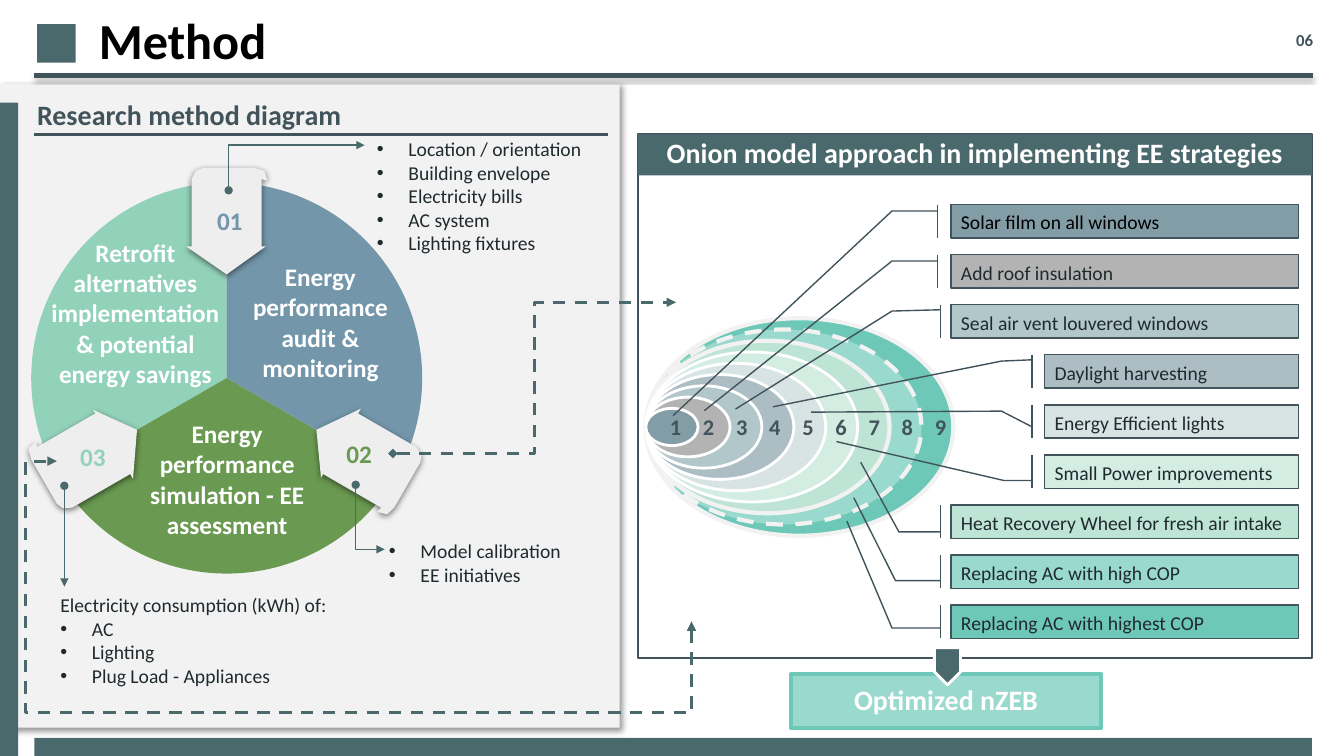
from math import cos, radians, sin

from lxml.etree import SubElement
from pptx import Presentation
from pptx.dml.color import RGBColor
from pptx.enum.dml import MSO_LINE as Dash
from pptx.enum.shapes import MSO_CONNECTOR as Connector, MSO_SHAPE as Shape
from pptx.enum.text import MSO_ANCHOR as Anchor, MSO_AUTO_SIZE as AutoSize, PP_ALIGN as Align
from pptx.oxml.ns import qn
from pptx.util import Pt

FONT = "Calibri"
BLACK = RGBColor(0x00, 0x00, 0x00)
WHITE = RGBColor(0xFF, 0xFF, 0xFF)
PANEL = RGBColor(0xF2, 0xF2, 0xF2)
TAB = RGBColor(0xEE, 0xEE, 0xEE)
TEAL = RGBColor(0x4A, 0x69, 0x6C)
SLATE = RGBColor(0x41, 0x54, 0x5B)
INK = RGBColor(0x20, 0x2A, 0x2E)
MINT = RGBColor(0x93, 0xD2, 0xBA)
GREEN = RGBColor(0x6A, 0x99, 0x51)
BLUE = RGBColor(0x73, 0x96, 0xAA)
AQUA = RGBColor(0x9A, 0xD9, 0xCD)
DEEP_AQUA = RGBColor(0x6D, 0xC8, 0xB7)

WHEEL_X, WHEEL_Y, WHEEL_RADIUS = 162, 270, 139.7
TAB_OUTLINE = [(-17, -150), (-22, -148), (-25, -142), (-25, -94), (-29, -94), (0, -74),
               (28, -94), (25, -94), (25, -142), (29, -141), (27, -148), (20, -150)]
TAB_SHADOW = (50, 4.5, 1.5, 90)

# text, fill, left, callout line as (y, x) fractions of the box; innermost layer first
STRATEGIES = [
    ("Solar film on all windows", RGBColor(0x83, 0x9D, 0xA7), 679.7,
     (0.19, -0.04, 0.19, -0.17, 6.33, -0.8)),
    ("Add roof insulation", RGBColor(0xB3, 0xB3, 0xB3), 679.7,
     (0.19, -0.04, 0.19, -0.17, 4.68, -0.71)),
    ("Seal air vent louvered windows", RGBColor(0xB1, 0xC7, 0xCA), 679.7,
     (0.15, -0.03, 0.19, -0.17, 3.13, -0.62)),
    ("Daylight harvesting", RGBColor(0xAC, 0xBE, 0xC4), 746.6,
     (0.15, -0.05, 0.19, -0.17, 1.56, -1.07)),
    ("Energy Efficient lights", RGBColor(0xD8, 0xE3, 0xE4), 746.6,
     (0.66, -0.05, 0.19, -0.17, 0.22, -0.92)),
    ("Small Power improvements", RGBColor(0xD4, 0xED, 0xE3), 746.6,
     (0.77, -0.05, 0.77, -0.16, -0.4, -0.82)),
    ("Heat Recovery Wheel for fresh air intake", RGBColor(0xBE, 0xE4, 0xD6), 679.7,
     (0.81, -0.03, 0.81, -0.15, -1.28, -0.26)),
    ("Replacing AC with high COP", AQUA, 679.7,
     (0.77, -0.03, 0.77, -0.16, -1.72, -0.28)),
    ("Replacing AC with highest COP", DEEP_AQUA, 679.7,
     (0.69, -0.03, 0.69, -0.17, -2.52, -0.3)),
]


def set_shadow(shape, shadow=None):
    """Replace the theme shadow by (opacity %, blur, distance, angle) or by none."""
    effects = SubElement(shape._element.spPr, qn("a:effectLst"))
    if shadow:
        opacity, blur, distance, angle = shadow
        outer = SubElement(effects, qn("a:outerShdw"), blurRad=str(Pt(blur)),
                           dist=str(Pt(distance)), dir=str(angle * 60000),
                           algn="t", rotWithShape="0")
        color = SubElement(outer, qn("a:srgbClr"), val=str(BLACK))
        SubElement(color, qn("a:alpha"), val=str(opacity * 1000))


def paint(shape, fill=None, line=None, weight=1, shadow=None):
    if fill is None:
        shape.fill.background()
    else:
        shape.fill.solid()
        shape.fill.fore_color.rgb = fill
    if line is None:
        shape.line.fill.background()
    else:
        shape.line.color.rgb = line
        shape.line.width = Pt(weight)
    set_shadow(shape, shadow)
    return shape


def add_box(slide, kind, left, top, width, height, **style):
    shape = slide.shapes.add_shape(kind, Pt(left), Pt(top), Pt(width), Pt(height))
    return paint(shape, **style)


def write(shape, text, size, color, bold=False, align=Align.LEFT, spacing=None):
    frame = shape.text_frame
    frame.text = text
    frame.word_wrap = True
    for paragraph in frame.paragraphs:
        paragraph.alignment = align
        paragraph.line_spacing = spacing
        for run in paragraph.runs:
            run.font.name, run.font.size, run.font.bold = FONT, Pt(size), bold
            run.font.color.rgb = color


def add_text(slide, left, top, width, height, text, size, color, inset=9.4, **style):
    box = slide.shapes.add_textbox(Pt(left), Pt(top), Pt(width), Pt(height))
    write(box, text, size, color, **style)
    frame = box.text_frame
    frame.vertical_anchor = Anchor.MIDDLE
    frame.margin_left = frame.margin_right = Pt(inset)
    frame.margin_top = frame.margin_bottom = Pt(min(inset, 9.4) if inset > 8 else 3.6)
    return box


def add_list(slide, left, top, width, height, items, heading=None):
    lines = ([heading] if heading else []) + items
    box = add_text(slide, left, top, width, height, "\n".join(lines), 14, INK)
    for paragraph in box.text_frame.paragraphs[-len(items):]:
        properties = paragraph._p.get_or_add_pPr()
        properties.set("marL", str(Pt(22.5)))
        properties.set("indent", str(Pt(-22.5)))
        SubElement(properties, qn("a:buFont"), typeface="Arial")
        SubElement(properties, qn("a:buChar"), char="•")


def add_line(slide, begin, end, color=TEAL, weight=1.0, kind=Connector.STRAIGHT, bends=(),
             head=None, tail=None, dashed=False, shadow=None):
    line = slide.shapes.add_connector(kind, *(Pt(value) for value in begin + end))
    line.line.color.rgb = color
    line.line.width = Pt(weight)
    if dashed:
        line.line.dash_style = Dash.DASH
    outline = line.line._get_or_add_ln()
    for tag, arrow in (("a:headEnd", head), ("a:tailEnd", tail)):
        if arrow:
            SubElement(outline, qn(tag), type=arrow)
    guides = line._element.spPr.find(qn("a:prstGeom")).find(qn("a:avLst"))
    for number, bend in enumerate(bends, 1):
        SubElement(guides, qn("a:gd"), name=f"adj{number}", fmla=f"val {round(bend * 100000)}")
    set_shadow(line, shadow)
    return line


def add_tab(slide, angle):
    """Draw a pointed tab of the wheel, turned clockwise from the top."""
    cosine, sine = cos(radians(angle)), sin(radians(angle))
    points = [(Pt(WHEEL_X + x * cosine - y * sine), Pt(WHEEL_Y + x * sine + y * cosine))
              for x, y in TAB_OUTLINE]
    builder = slide.shapes.build_freeform(*points[0])
    builder.add_line_segments(points[1:])
    paint(builder.convert_to_shape(), TAB, shadow=TAB_SHADOW)


def add_wheel(slide):
    size = 2 * WHEEL_RADIUS
    for start, color in ((150, MINT), (30, GREEN), (270, BLUE)):
        sector = add_box(slide, Shape.PIE, WHEEL_X - WHEEL_RADIUS, WHEEL_Y - WHEEL_RADIUS,
                         size, size, fill=color)
        # angles are stored in 60000ths of a degree, adjustments in 100000ths
        sector.adjustments[0] = start * 0.6
        sector.adjustments[1] = (start + 120) % 360 * 0.6
    for angle in (0, 120, 240):
        add_tab(slide, angle)
    for left, top, width, height, text, color in (
        (26.6, 170, 140.4, 107, "Retrofit alternatives implementation & potential energy savings",
         WHITE),
        (168.5, 188, 121, 84, "Energy performance audit & monitoring", WHITE),
        (93.6, 300, 137.5, 84, "Energy performance simulation - EE assessment", WHITE),
        (143.3, 147, 41.8, 21, "01", BLUE),
        (232.6, 313.2, 48.2, 21, "02", GREEN),
        (45.4, 315.4, 41.8, 21, "03", MINT),
    ):
        add_text(slide, left, top, width, height, text, 18, color, bold=True, align=Align.CENTER)


def add_onion(slide):
    for layer in reversed(range(len(STRATEGIES))):
        width, height = 37.4 + 22.8 * layer, 26.6 + 16.1 * layer
        ring = add_box(slide, Shape.OVAL, 461.5, 305 - height / 2, width, height,
                       fill=STRATEGIES[layer][1], line=PANEL if layer > 5 else WHITE,
                       weight=3 if layer > 5 else 2)
        if layer == 7:
            ring.line.dash_style = Dash.DASH
    numbers = add_text(slide, 471.6, 291.6, 221.8, 26.6, "1 2 3 4 5 6 7 8 9", 16, SLATE,
                       inset=7.2, bold=True)
    numbers.text_frame.paragraphs[0].runs[0].font._element.set("spc", "600")
    for row, (text, fill, left, callout) in enumerate(STRATEGIES):
        box = add_box(slide, Shape.LINE_CALLOUT_2_BORDER_AND_ACCENT_BAR, left,
                      146.2 + 35.75 * row, 928.1 - left, 23.8, fill=fill, line=SLATE)
        for index, value in enumerate(callout):
            box.adjustments[index] = value
        write(box, text, 14, INK if row else BLACK, spacing=1.07)
        box.text_frame.vertical_anchor = Anchor.MIDDLE


def add_title(slide):
    title = slide.shapes.title
    title.left, title.top, title.width, title.height = Pt(63.4), Pt(7.9), Pt(190), Pt(46)
    write(title, "Method", 36, BLACK, bold=True, spacing=0.9)
    title.text_frame.auto_size = AutoSize.NONE
    title.text_frame.vertical_anchor = Anchor.TOP


def add_flow_lines(slide):
    add_line(slide, (163.4, 136), (260.6, 103.7), kind=Connector.ELBOW, bends=(0,),
             head="oval", tail="triangle")
    add_line(slide, (254.2, 346.3), (275, 392.4), kind=Connector.ELBOW, bends=(0,),
             head="oval", tail="triangle")
    add_line(slide, (46, 347), (46, 419), head="oval", tail="triangle")
    add_line(slide, (280.8, 324), (483.1, 216), weight=2.25, kind=Connector.ELBOW,
             head="diamond", tail="triangle", dashed=True)
    # a three-bend route, laid out upright and then turned a quarter
    feedback = add_line(slide, (324.7, 159.8), (210.2, 613.4), weight=2.25,
                        kind=Connector.ELBOW, bends=(-0.57, 1.05), head="triangle",
                        tail="triangle", dashed=True)
    properties = feedback._element.spPr
    properties.find(qn("a:prstGeom")).set("prst", "bentConnector4")
    properties.find(qn("a:xfrm")).set("rot", str(90 * 60000))


def main():
    presentation = Presentation()
    presentation.slide_width, presentation.slide_height = Pt(960.48), Pt(540)
    slide = presentation.slides.add_slide(presentation.slide_layouts[5])

    add_box(slide, Shape.RECTANGLE, 0, 59.8, 442.8, 460, fill=PANEL, shadow=(40, 4, 3, 45))
    add_box(slide, Shape.RECTANGLE, 455.8, 95.8, 481.7, 374.4, line=SLATE, weight=1.5)
    add_wheel(slide)
    add_line(slide, (24.5, 54), (938.2, 54), SLATE, 3, shadow=(38, 3.1, 1.6, 90))
    add_title(slide)
    add_box(slide, Shape.RECTANGLE, 26.6, 17.3, 27.4, 27.4, fill=TEAL)
    banner = add_box(slide, Shape.RECTANGLE, 455.8, 95.8, 481.7, 29.5, fill=TEAL)
    write(banner, "Onion model approach in implementing EE strategies", 20, WHITE,
          bold=True, align=Align.CENTER, spacing=0.9)

    add_list(slide, 33.8, 414.7, 224, 85, ["AC", "Lighting", "Plug Load - Appliances"],
             heading="Electricity consumption (kWh) of:")
    add_list(slide, 260, 87.1, 167, 105.8, ["Location / orientation", "Building envelope",
             "Electricity bills", "AC system", "Lighting fixtures"])
    add_list(slide, 268.6, 377.3, 148.3, 49, ["Model calibration", "EE initiatives"])
    add_onion(slide)
    add_flow_lines(slide)

    result = add_box(slide, Shape.RECTANGLE, 565.2, 481.7, 221.8, 38.2, fill=AQUA,
                     line=DEEP_AQUA, weight=3)
    write(result, "Optimized nZEB", 20, WHITE, bold=True, align=Align.CENTER, spacing=0.9)
    add_box(slide, Shape.RECTANGLE, 24.5, 527, 913, 13, fill=TEAL)
    add_box(slide, Shape.RECTANGLE, 0, 73.4, 13, 466.6, fill=TEAL)
    add_text(slide, 19.4, 65.5, 388.8, 31.7, "Research method diagram", 20, SLATE,
             inset=7.2, bold=True)
    add_text(slide, 907.9, 15.1, 49, 26.6, "06", 12, SLATE, bold=True, align=Align.CENTER)
    add_line(slide, (24.5, 95.8), (434.2, 95.8), SLATE, 2.25)
    pointer = add_box(slide, Shape.PENTAGON, 663.8, 466.6, 26.6, 18.7, fill=TEAL,
                      line=WHITE, weight=2)
    pointer.rotation = 90
    presentation.save("out.pptx")


if __name__ == "__main__":
    main()
